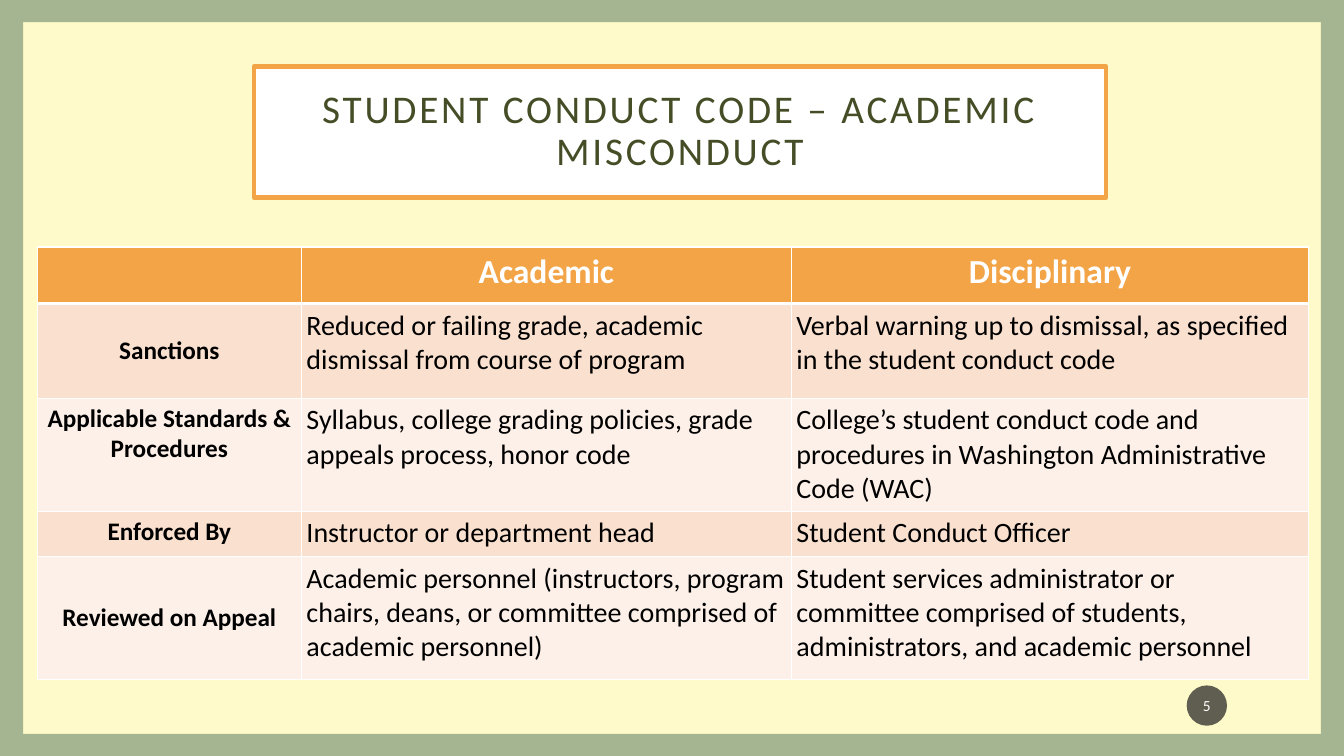
import pptx
import pptx.dml.color
import pptx.enum.shapes
import pptx.enum.text
import pptx.oxml.ns
import pptx.util
import lxml.etree

EMU_PER_PX = 9144
WIDTH, HEIGHT = 1333, 750
ALIGN = pptx.enum.text.PP_ALIGN
ANCHOR = pptx.enum.text.MSO_ANCHOR
SHAPE = pptx.enum.shapes.MSO_SHAPE
qn = pptx.oxml.ns.qn


def px(length):
    return pptx.util.Emu(length * EMU_PER_PX)


def colour(hex_string):
    return pptx.dml.color.RGBColor.from_string(hex_string)


def write(frame, text, font="Calibri", size=20, ink="000000", bold=False,
          align=ALIGN.LEFT, leading=None, tracking=None):
    paragraph = frame.paragraphs[0]
    paragraph.alignment = align
    if leading:
        paragraph.line_spacing = leading
    run = paragraph.add_run()
    run.text = text
    run.font.name = font
    run.font.size = pptx.util.Pt(size)
    run.font.bold = bold
    run.font.color.rgb = colour(ink)
    if tracking:
        run.font._element.set("spc", str(tracking * 100))


class ConductSlide:
    backdrop = "FEFAC9"
    accent = "F3A447"
    frame = "A5B592"
    heading = "444D26"
    bands = ("FAE0CF", "FDF0E9")

    def __init__(self, deck):
        self.slide = deck.slides.add_slide(deck.slide_layouts[5])
        self.slide.background.fill.solid()
        self.slide.background.fill.fore_color.rgb = colour(self.backdrop)

    def title(self, text, left, top, width, height):
        title = self.slide.shapes.title
        title.left, title.top = px(left), px(top)
        title.width, title.height = px(width), px(height)
        title.fill.solid()
        title.fill.fore_color.rgb = colour("FFFFFF")
        title.line.color.rgb = colour(self.accent)
        title.line.width = pptx.util.Pt(3)
        body = title.text_frame
        body.auto_size = pptx.enum.text.MSO_AUTO_SIZE.NONE
        body.word_wrap = True
        body.vertical_anchor = ANCHOR.MIDDLE
        body.margin_left = body.margin_right = px(20)
        body.margin_top = body.margin_bottom = px(20)
        write(body, text, size=28, ink=self.heading, align=ALIGN.CENTER,
              leading=0.9, tracking=2)

    def shape(self, kind, left, top, width, height, fill, alpha=None):
        shape = self.slide.shapes.add_shape(
            kind, px(left), px(top), px(width), px(height))
        shape.shadow.inherit = False
        shape.line.fill.background()
        shape.fill.solid()
        shape.fill.fore_color.rgb = colour(fill)
        if alpha:
            tint = shape._element.spPr.find(qn("a:solidFill"))[0]
            lxml.etree.SubElement(tint, qn("a:alpha"), val=str(alpha * 1000))
        return shape

    def border(self, cell, **widths):
        properties = cell._tc.get_or_add_tcPr()
        for position, side in enumerate("LRTB"):
            line = lxml.etree.Element(
                qn("a:ln" + side), w=str(pptx.util.Pt(widths.get(side, 1))))
            fill = lxml.etree.SubElement(line, qn("a:solidFill"))
            lxml.etree.SubElement(fill, qn("a:srgbClr"), val="FFFFFF")
            properties.insert(position, line)

    def cell(self, cell, text, row, column, centred_rows):
        header, label = row == 0, column == 0
        cell.margin_left = cell.margin_right = px(5)
        cell.margin_top = cell.margin_bottom = px(5)
        cell.fill.solid()
        cell.fill.fore_color.rgb = colour(
            self.accent if header else self.bands[(row - 1) % 2])
        cell.vertical_anchor = (
            ANCHOR.MIDDLE if label and row in centred_rows else ANCHOR.TOP)
        self.border(cell, T=3 if row == 1 else 1, B=3 if header else 1)
        if text:
            write(cell.text_frame, text,
                  size=24 if header else 18 if label else 20,
                  ink="FFFFFF" if header else "000000",
                  bold=header or label,
                  align=ALIGN.CENTER if header or label else ALIGN.LEFT)

    def table(self, rows, left, top, widths, heights, centred_rows):
        table = self.slide.shapes.add_table(
            len(rows), len(widths), px(left), px(top),
            px(sum(widths)), px(sum(heights))).table
        for column, width in zip(table.columns, widths):
            column.width = px(width)
        for row, height in zip(table.rows, heights):
            row.height = px(height)
        for r, texts in enumerate(rows):
            for c, text in enumerate(texts):
                self.cell(table.cell(r, c), text, r, c, centred_rows)

    def border_frame(self, side, edge):
        for left, top, width, height in (
                (0, 0, side, HEIGHT), (WIDTH - side, 0, side, HEIGHT),
                (0, 0, WIDTH, edge), (0, HEIGHT - edge, WIDTH, edge)):
            self.shape(SHAPE.RECTANGLE, left, top, width, height, self.frame)

    def page_badge(self, number, left, top, diameter):
        badge = self.shape(SHAPE.OVAL, left, top, diameter, diameter,
                           "1D1D1D", alpha=70)
        body = badge.text_frame
        body.margin_left = body.margin_right = px(2)
        body.margin_top = body.margin_bottom = px(5)
        body.vertical_anchor = ANCHOR.MIDDLE
        write(body, number, size=11, ink="FFFFFF", align=ALIGN.CENTER)


COMPARISON = (
    ("", "Academic", "Disciplinary"),
    ("Sanctions",
     "Reduced or failing grade, academic dismissal from course of program",
     "Verbal warning up to dismissal, as specified in the student conduct code"),
    ("Applicable Standards & Procedures",
     "Syllabus, college grading policies, grade appeals process, honor code",
     "College’s student conduct code and procedures in Washington "
     "Administrative Code (WAC)"),
    ("Enforced By", "Instructor or department head", "Student Conduct Officer"),
    ("Reviewed on Appeal",
     "Academic personnel (instructors, program chairs, deans, or committee "
     "comprised of academic personnel)",
     "Student services administrator or committee comprised of students, "
     "administrators, and academic personnel"),
)


def main():
    deck = pptx.Presentation()
    deck.slide_width, deck.slide_height = px(WIDTH), px(HEIGHT)
    conduct = ConductSlide(deck)
    conduct.border_frame(side=23, edge=22)
    conduct.title("STUDENT CONDUCT CODE – ACADEMIC MISCONDUCT", 252, 66, 845, 130)
    conduct.table(COMPARISON, 37, 245, widths=(262, 486, 513),
                  heights=(56, 94, 112, 45, 122), centred_rows=(1, 4))
    conduct.page_badge("5", 1177, 680, 40)
    deck.save("out.pptx")


if __name__ == "__main__":
    main()
